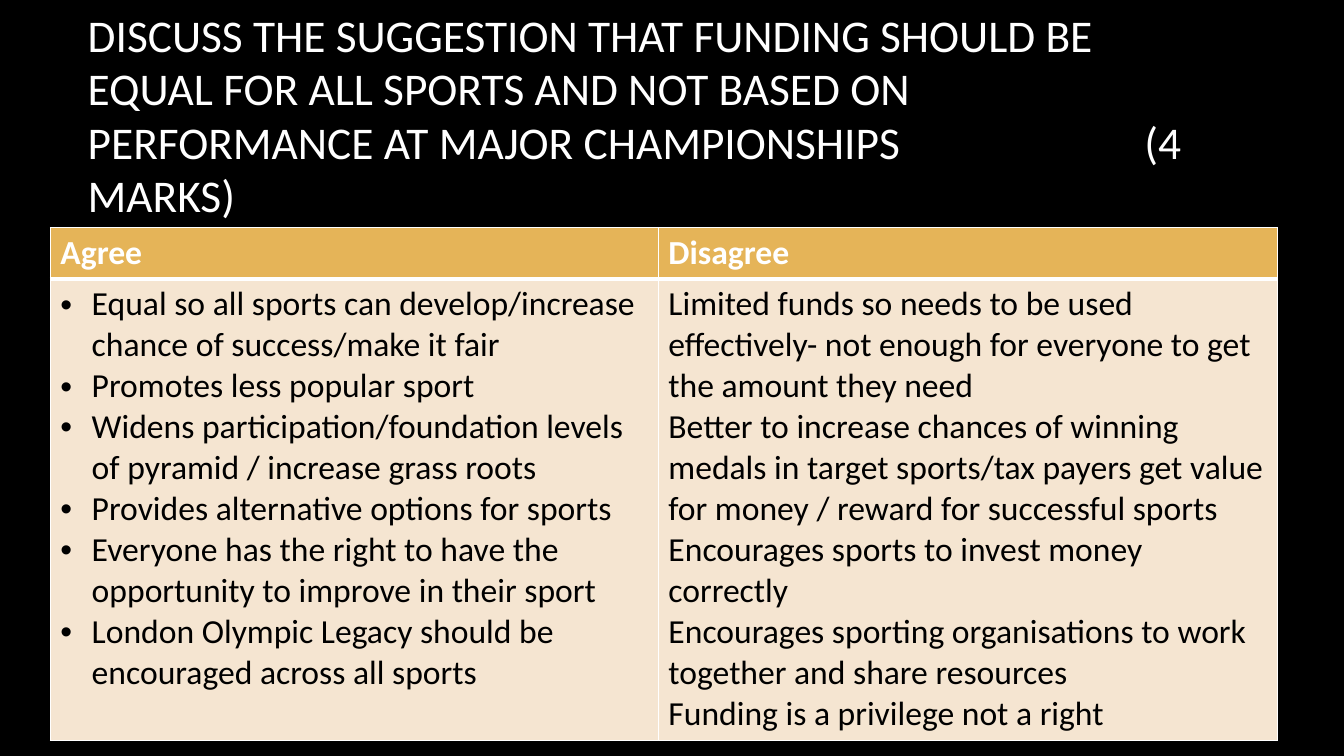
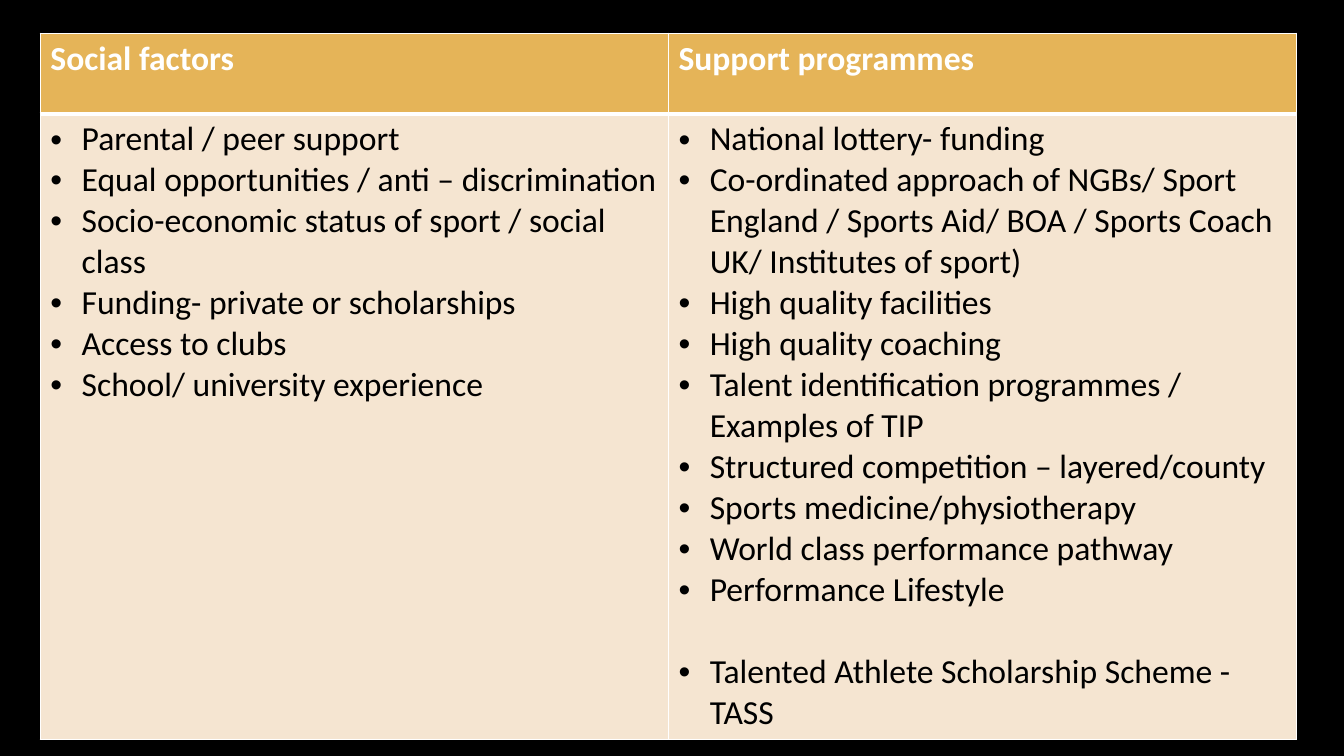
"""Build two slides that set out sports funding and support in tables."""
import dataclasses

import lxml.etree
import pptx
import pptx.dml.color
import pptx.enum.text
import pptx.oxml.ns
import pptx.presentation
import pptx.slide
import pptx.table
import pptx.text.text
import pptx.util

Inches = pptx.util.Inches
Pt = pptx.util.Pt
qn = pptx.oxml.ns.qn


@dataclasses.dataclass(frozen=True)
class Theme:
    font: str = "Calibri"
    back: str = "000000"
    light: str = "FFFFFF"
    dark: str = "000000"
    head: str = "E5B458"
    body: str = "F5E5D1"
    title: float = 32.4
    text: float = 24
    thin: float = 1
    thick: float = 3
    indent: float = 0.31


@dataclasses.dataclass(frozen=True)
class Column:
    head: str
    width: float
    items: tuple[str, ...]
    bullets: bool = True
    gap: float = 0


@dataclasses.dataclass(frozen=True)
class Grid:
    left: float
    top: float
    rows: tuple[float, float]
    columns: tuple[Column, ...]


THEME = Theme()

TITLE = (
    "DISCUSS THE SUGGESTION THAT FUNDING SHOULD BE EQUAL FOR ALL SPORTS "
    "AND NOT BASED ON PERFORMANCE AT MAJOR CHAMPIONSHIPS\t(4 MARKS)"
)

FUNDING = Grid(0.5, 2.26, (0.5, 4.58), (
    Column("Agree", 6.03, (
        "Equal so all sports can develop/increase chance of success/make it fair",
        "Promotes less popular sport",
        "Widens participation/foundation levels of pyramid / increase grass roots",
        "Provides alternative options for sports",
        "Everyone has the right to have the opportunity to improve in their sport",
        "London Olympic Legacy should be encouraged across all sports",
    )),
    Column("Disagree", 6.14, (
        "Limited funds so needs to be used effectively- not enough for everyone "
        "to get the amount they need",
        "Better to increase chances of winning medals in target sports/tax payers "
        "get value for money / reward for successful sports",
        "Encourages sports to invest money correctly",
        "Encourages sporting organisations to work together and share resources",
        "Funding is a privilege not a right",
    ), bullets=False),
))

SUPPORT = Grid(0.4, 0.33, (0.8, 6.21), (
    Column("Social factors", 6.23, (
        "Parental / peer support",
        "Equal opportunities / anti – discrimination",
        "Socio-economic status of sport / social class",
        "Funding- private or scholarships",
        "Access to clubs",
        "School/ university experience",
    )),
    Column("Support programmes", 6.23, (
        "National lottery- funding",
        "Co-ordinated approach of NGBs/ Sport England / Sports Aid/ BOA / "
        "Sports Coach UK/ Institutes of sport)",
        "High quality facilities",
        "High quality coaching",
        "Talent identification programmes / Examples of TIP",
        "Structured competition – layered/county",
        "Sports medicine/physiotherapy",
        "World class performance pathway",
        "Performance Lifestyle",
        "Talented Athlete Scholarship Scheme - TASS",
    ), gap=29.3),
))


def paint(color: str) -> pptx.dml.color.RGBColor:
    return pptx.dml.color.RGBColor.from_string(color)


def write(para: pptx.text.text._Paragraph, text: str, size: float,
          color: str, bold: bool = False) -> None:
    run = para.add_run()
    run.text = text
    run.font.name = THEME.font
    run.font.size = Pt(size)
    run.font.bold = bold
    run.font.color.rgb = paint(color)


def bullet(para: pptx.text.text._Paragraph) -> None:
    props = para._p.get_or_add_pPr()
    props.set("marL", str(Inches(THEME.indent)))
    props.set("indent", str(-Inches(THEME.indent)))
    font = lxml.etree.SubElement(props, qn("a:buFont"))
    font.set("typeface", "Arial")
    mark = lxml.etree.SubElement(props, qn("a:buChar"))
    mark.set("char", "•")


def style(cell: pptx.table._Cell, fill: str, top: float, bottom: float) -> None:
    props = cell._tc.get_or_add_tcPr()
    sides = {"L": THEME.thin, "R": THEME.thin, "T": top, "B": bottom}
    for side, width in sides.items():
        line = lxml.etree.SubElement(props, qn(f"a:ln{side}"))
        line.set("w", str(Pt(width)))
        solid = lxml.etree.SubElement(line, qn("a:solidFill"))
        color = lxml.etree.SubElement(solid, qn("a:srgbClr"))
        color.set("val", THEME.light)
    cell.fill.solid()
    cell.fill.fore_color.rgb = paint(fill)


def fill_body(cell: pptx.table._Cell, column: Column) -> None:
    frame = cell.text_frame
    for index, item in enumerate(column.items):
        para = frame.add_paragraph() if index else frame.paragraphs[0]
        if column.bullets:
            bullet(para)
        write(para, item, THEME.text, THEME.dark)
    if column.gap:
        frame.paragraphs[-1].space_before = Pt(column.gap)


def add_grid(slide: pptx.slide.Slide, grid: Grid) -> None:
    width = sum(column.width for column in grid.columns)
    table = slide.shapes.add_table(
        len(grid.rows), len(grid.columns), Inches(grid.left), Inches(grid.top),
        Inches(width), Inches(sum(grid.rows))).table
    table.horz_banding = False
    for row, height in zip(table.rows, grid.rows):
        row.height = Inches(height)
    for index, column in enumerate(grid.columns):
        table.columns[index].width = Inches(column.width)
        head, body = table.cell(0, index), table.cell(1, index)
        style(head, THEME.head, THEME.thin, THEME.thick)
        style(body, THEME.body, THEME.thick, THEME.thin)
        write(head.text_frame.paragraphs[0], column.head, THEME.text,
              THEME.light, bold=True)
        fill_body(body, column)


def add_title(slide: pptx.slide.Slide, text: str) -> None:
    title = slide.shapes.title
    title.left, title.top = Inches(0.77), Inches(0.36)
    title.width, title.height = Inches(11.08), Inches(1.59)
    frame = title.text_frame
    frame.word_wrap = True
    frame.auto_size = pptx.enum.text.MSO_AUTO_SIZE.NONE
    frame.vertical_anchor = pptx.enum.text.MSO_ANCHOR.MIDDLE
    para = frame.paragraphs[0]
    para.alignment = pptx.enum.text.PP_ALIGN.LEFT
    para.line_spacing = 0.98
    tabs = lxml.etree.SubElement(para._p.get_or_add_pPr(), qn("a:tabLst"))
    stop = lxml.etree.SubElement(tabs, qn("a:tab"))
    stop.set("pos", str(Inches(10.48)))
    stop.set("algn", "l")
    write(para, text, THEME.title, THEME.light)


def main() -> None:
    deck = pptx.Presentation()
    deck.slide_width, deck.slide_height = Inches(13.33), Inches(7.5)
    back = deck.slide_master.background.fill
    back.solid()
    back.fore_color.rgb = paint(THEME.back)
    titled = deck.slide_layouts.get_by_name("Title Only")
    blank = deck.slide_layouts.get_by_name("Blank")

    first = deck.slides.add_slide(titled)
    add_title(first, TITLE)
    add_grid(first, FUNDING)
    add_grid(deck.slides.add_slide(blank), SUPPORT)
    deck.save("out.pptx")


if __name__ == "__main__":
    main()
